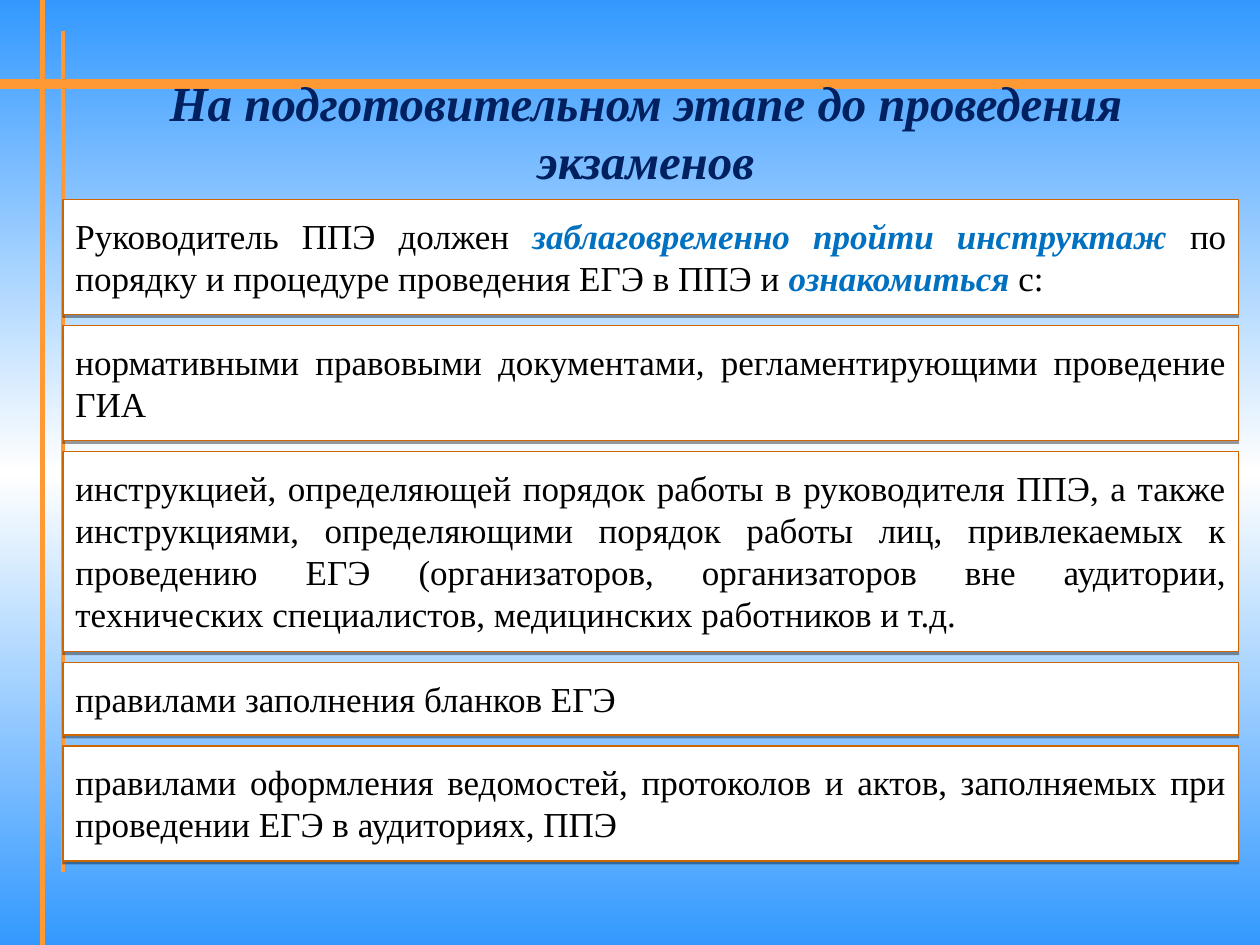
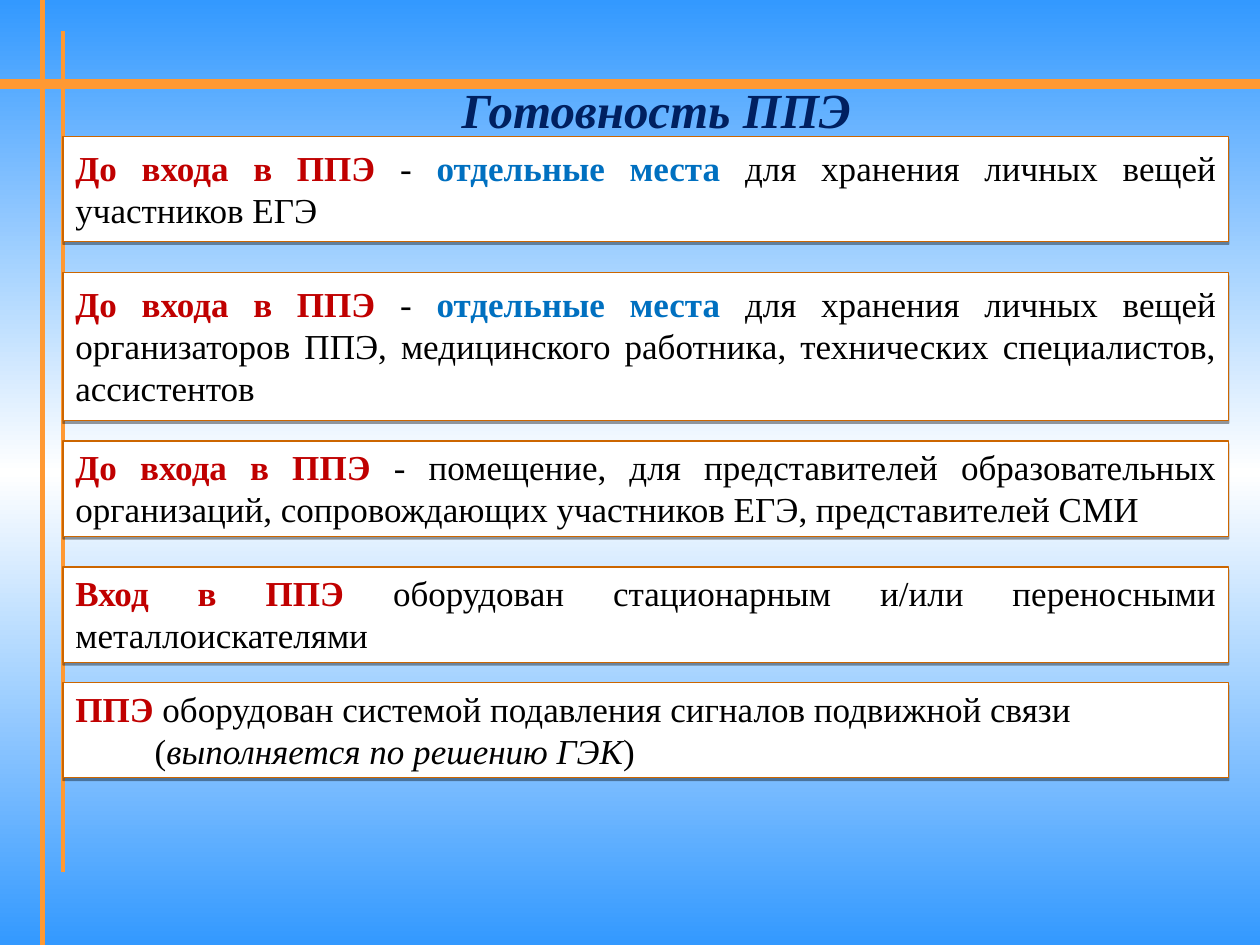
from lxml.etree import SubElement
from pptx import Presentation
from pptx.dml.color import RGBColor
from pptx.enum.shapes import MSO_CONNECTOR, MSO_SHAPE
from pptx.enum.text import MSO_ANCHOR, MSO_AUTO_SIZE, PP_ALIGN
from pptx.oxml.ns import qn
from pptx.util import Cm, Pt

FONT = "Times New Roman"
SKY, WHITE, ORANGE, BROWN = "3399FF", "FFFFFF", "FF9933", "CC6600"
NAVY, BLUE, RED, BLACK = "002060", "0070C0", "C00000", "000000"
SLIDE_W, SLIDE_H = 25.4, 19.05
LEFT = 1.27
LINE_H = 0.86

# Run formats
KEY = dict(color=BLUE, bold=True, italic=True)
PLACE = dict(color=RED, bold=True)
MARKED = dict(color=BLUE, bold=True)
ASIDE = dict(italic=True)


def rgb(code):
    return RGBColor.from_string(code)


def add_run(paragraph, text, size=20, color=BLACK, bold=False, italic=False):
    run = paragraph.add_run()
    run.text = text
    font = run.font
    font.name, font.size, font.bold, font.italic = FONT, Pt(size), bold, italic
    font.color.rgb = rgb(color)


def add_background(slide):
    fill = slide.background.fill
    fill.gradient()
    fill.gradient_angle = 90
    stops = slide.background._cSld.find(".//" + qn("a:gsLst"))
    stops.clear()
    for position, color in ((0, SKY), (50000, WHITE), (100000, SKY)):
        stop = SubElement(stops, qn("a:gs"), pos=str(position))
        SubElement(stop, qn("a:srgbClr"), val=color)


def add_rule(slide, x1, y1, x2, y2, width):
    rule = slide.shapes.add_connector(
        MSO_CONNECTOR.STRAIGHT, Cm(x1), Cm(y1), Cm(x2), Cm(y2))
    rule.line.color.rgb = rgb(ORANGE)
    rule.line.width = Pt(width)
    SubElement(rule._element.spPr, qn("a:effectLst"))


def add_base(prs):
    """Blank slide with the shared gradient and orange rules."""
    slide = prs.slides.add_slide(prs.slide_layouts[6])
    add_background(slide)
    add_rule(slide, 0, 1.69, SLIDE_W, 1.69, 6)
    add_rule(slide, 0.85, 0, 0.85, SLIDE_H, 3)
    add_rule(slide, LEFT, 0.63, LEFT, 17.57, 2.25)
    return slide


def add_title(slide, text, top, width, height, anchor=MSO_ANCHOR.TOP):
    box = slide.shapes.add_textbox(Cm(LEFT), Cm(top), Cm(width), Cm(height))
    frame = box.text_frame
    frame.word_wrap = True
    frame.vertical_anchor = anchor
    heading = frame.paragraphs[0]
    heading.alignment = PP_ALIGN.CENTER
    add_run(heading, text, size=28, color=NAVY, bold=True, italic=True)


def add_shadow(shape):
    shape.shadow.inherit = False
    effects = shape._element.spPr.find(qn("a:effectLst"))
    shadow = SubElement(effects, qn("a:outerShdw"), blurRad="0",
                        dist=str(Pt(1.6)), dir="5400000", rotWithShape="0")
    color = SubElement(shadow, qn("a:srgbClr"), val=BLACK)
    SubElement(color, qn("a:alpha"), val="38000")


def add_panel(slide, top, width, lines, inset, runs, aside=()):
    """White panel sized by its line count; returns its bottom edge."""
    height = lines * LINE_H + 2 * inset
    panel = slide.shapes.add_shape(
        MSO_SHAPE.RECTANGLE, Cm(LEFT), Cm(top), Cm(width), Cm(height))
    panel.fill.solid()
    panel.fill.fore_color.rgb = rgb(WHITE)
    panel.line.color.rgb = rgb(BROWN)
    panel.line.width = Pt(0.75)
    add_shadow(panel)

    frame = panel.text_frame
    frame.word_wrap = True
    frame.auto_size = MSO_AUTO_SIZE.SHAPE_TO_FIT_TEXT
    frame.vertical_anchor = MSO_ANCHOR.TOP
    frame.margin_left = frame.margin_right = Cm(0.25)
    frame.margin_top = frame.margin_bottom = Cm(inset)
    statement = frame.paragraphs[0]
    statement.alignment = PP_ALIGN.JUSTIFY
    for text, style in runs:
        add_run(statement, text, **style)

    # Indented remark under the statement
    if aside:
        remark = frame.add_paragraph()
        remark.alignment = PP_ALIGN.JUSTIFY
        remark._p.get_or_add_pPr().set("marL", str(Cm(1.6)))
        for text, style in aside:
            add_run(remark, text, **style)
    return top + height


def build_preparation(prs):
    slide = add_base(prs)
    add_title(slide, "На подготовительном этапе до проведения экзаменов",
              1.9, 23.5, 1.48, MSO_ANCHOR.MIDDLE)
    duties = [
        (2, [("Руководитель ППЭ должен ", {}),
             ("заблаговременно пройти инструктаж ", KEY),
             ("по порядку и процедуре проведения ЕГЭ в ППЭ и ", {}),
             ("ознакомиться", KEY), (" с:", {})]),
        (2, [("нормативными правовыми документами, регламентирующими "
              "проведение ГИА", {})]),
        (4, [("инструкцией, определяющей порядок работы в руководителя ППЭ, "
              "а также инструкциями, определяющими порядок работы лиц, "
              "привлекаемых к проведению ЕГЭ (организаторов, организаторов "
              "вне аудитории, технических специалистов, медицинских "
              "работников и т.д.", {})]),
        (1, [("правилами заполнения бланков ЕГЭ", {})]),
        (2, [("правилами оформления ведомостей, протоколов и актов, "
              "заполняемых при проведении ЕГЭ в аудиториях, ППЭ", {})]),
    ]
    top = 4.02
    for lines, runs in duties:
        top = add_panel(slide, top, 23.7, lines, 0.3, runs) + 0.22


def build_readiness(prs):
    slide = add_base(prs)
    add_title(slide, "Готовность ППЭ", 1.48, 23.92, 1.27)
    before_entry = ("До входа в ППЭ ", PLACE)
    storage = [before_entry, ("- ", {}), ("отдельные места ", MARKED)]
    requirements = [
        (2.75, 2, 0.2, storage + [
            ("для хранения личных вещей участников ЕГЭ", {})]),
        (5.5, 3, 0.2, storage + [
            ("для хранения личных вещей организаторов ППЭ, медицинского "
             "работника, технических специалистов, ассистентов", {})]),
        (8.89, 2, 0.1, [before_entry, (
            "- помещение, для представителей образовательных организаций, "
            "сопровождающих участников ЕГЭ, представителей СМИ", {})]),
        (11.43, 2, 0.1, [("Вход в ППЭ ", PLACE), (
            "оборудован стационарным и/или переносными "
            "металлоискателями", {})]),
        (13.76, 2, 0.1, [("ППЭ ", PLACE), (
            "оборудован системой подавления сигналов подвижной связи", {})],
         [("(", {}), ("выполняется по решению ГЭК", ASIDE), (")", {})]),
    ]
    for top, *content in requirements:
        add_panel(slide, top, 23.5, *content)


def main():
    prs = Presentation()
    prs.slide_width, prs.slide_height = Cm(SLIDE_W), Cm(SLIDE_H)
    build_preparation(prs)
    build_readiness(prs)
    prs.save("out.pptx")


if __name__ == "__main__":
    main()
